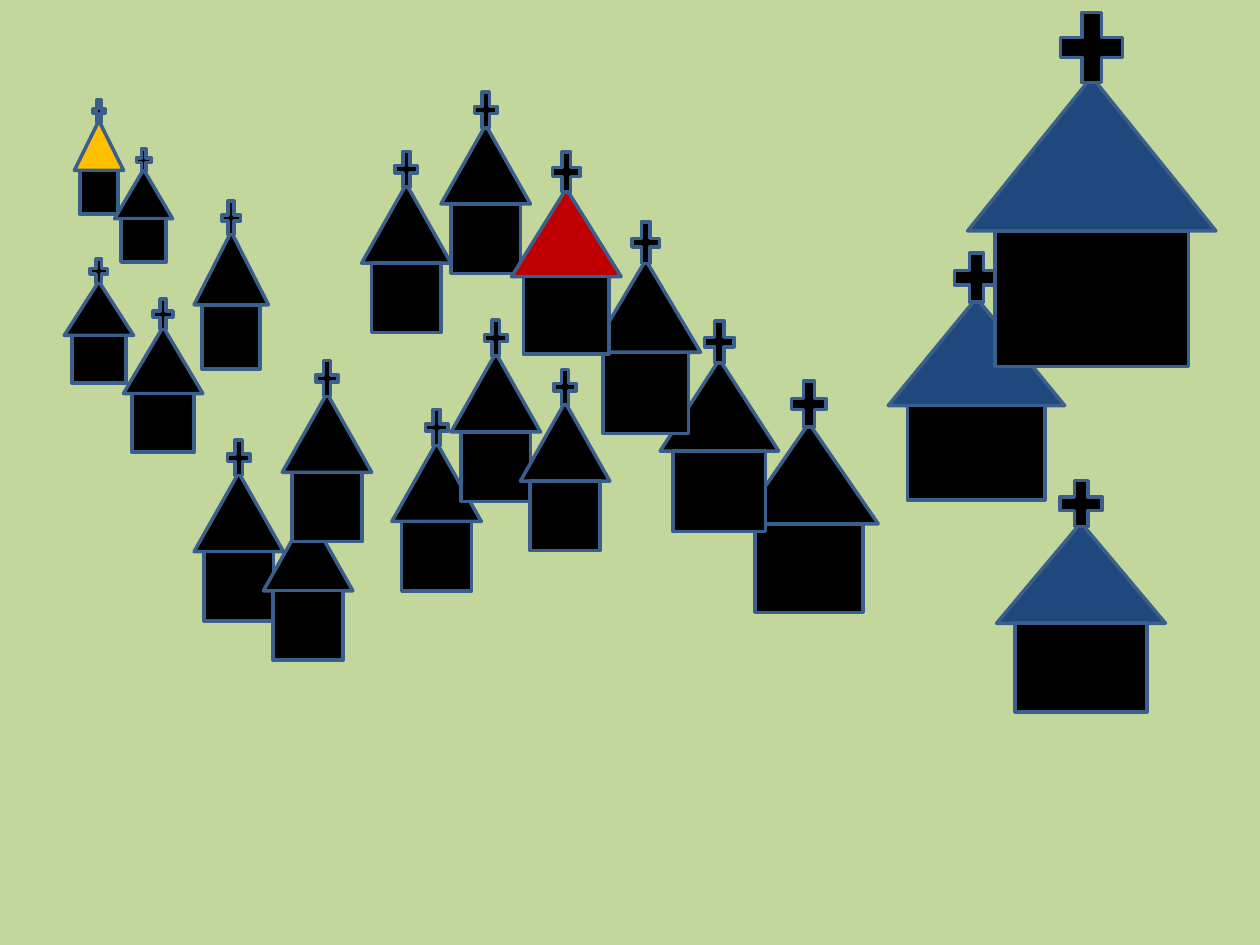
from pptx import Presentation
from pptx.dml.color import RGBColor
from pptx.enum.shapes import MSO_SHAPE
from pptx.util import Inches, Pt

MEADOW = RGBColor(0xC3, 0xD6, 0x9B)
OUTLINE = RGBColor(0x3A, 0x5F, 0x8C)
BLACK = RGBColor(0x00, 0x00, 0x00)
YELLOW = RGBColor(0xFF, 0xC0, 0x00)
RED = RGBColor(0xC0, 0x00, 0x00)
BLUE = RGBColor(0x1F, 0x49, 0x7D)

# Size of the most common chapel
WIDTH, HEIGHT = 0.71, 1.49

# Chapels from back to front: left, top, width, height, roof colour
CHAPELS = [
    (0.59, 0.76, 0.39, 0.94, YELLOW),
    (0.91, 1.15, 0.46, 0.93, BLACK),
    (0.51, 2.02, 0.55, 1.02, BLACK),
    (0.98, 2.33, 0.63, 1.26, BLACK),
    (1.54, 1.55, 0.59, 1.38, BLACK),
    (1.54, 3.44, WIDTH, HEIGHT, BLACK),
    (2.09, 3.75, WIDTH, HEIGHT, BLACK),
    (2.24, 2.81, WIDTH, HEIGHT, BLACK),
    (7.91, 3.75, 1.34, 1.90, BLUE),
    (5.87, 2.96, 1.10, 1.90, BLACK),
    (7.05, 1.94, 1.40, 2.03, BLUE),
    (7.68, 0.00, 1.97, 2.91, BLUE),
    (3.11, 3.20, WIDTH, HEIGHT, BLACK),
    (3.58, 2.49, WIDTH, HEIGHT, BLACK),
    (4.13, 2.88, WIDTH, HEIGHT, BLACK),
    (5.24, 2.49, 0.94, 1.73, BLACK),
    (4.69, 1.70, 0.87, 1.74, BLACK),
    (2.87, 1.15, WIDTH, HEIGHT, BLACK),
    (3.50, 0.68, WIDTH, HEIGHT, BLACK),
    (4.06, 1.15, 0.87, 1.66, RED),
]

# Parts as shares of the chapel: left, top, width, height
ROOF = (0, 0.21, 1, 0.42)
CROSS = (0.33, 0, 0.34, 0.26)
WALLS = (0.11, 0.63, 0.78, 0.37)

prs = Presentation()
prs.slide_width, prs.slide_height = Inches(10), Inches(7.5)
slide = prs.slides.add_slide(prs.slide_layouts[6])

# Background
slide.background.fill.solid()
slide.background.fill.fore_color.rgb = MEADOW

# Each chapel is a group of roof, cross and walls
for left, top, width, height, roof_color in CHAPELS:
    chapel = slide.shapes.add_group_shape()
    for preset, (dx, dy, w, h), color in (
        (MSO_SHAPE.ISOSCELES_TRIANGLE, ROOF, roof_color),
        (MSO_SHAPE.MATH_PLUS, CROSS, BLACK),
        (MSO_SHAPE.RECTANGLE, WALLS, BLACK),
    ):
        part = chapel.shapes.add_shape(
            preset,
            Inches(left + dx * width), Inches(top + dy * height),
            Inches(w * width), Inches(h * height),
        )
        part.shadow.inherit = False
        part.fill.solid()
        part.fill.fore_color.rgb = color
        part.line.color.rgb = OUTLINE
        part.line.width = Pt(2)

prs.save("out.pptx")
